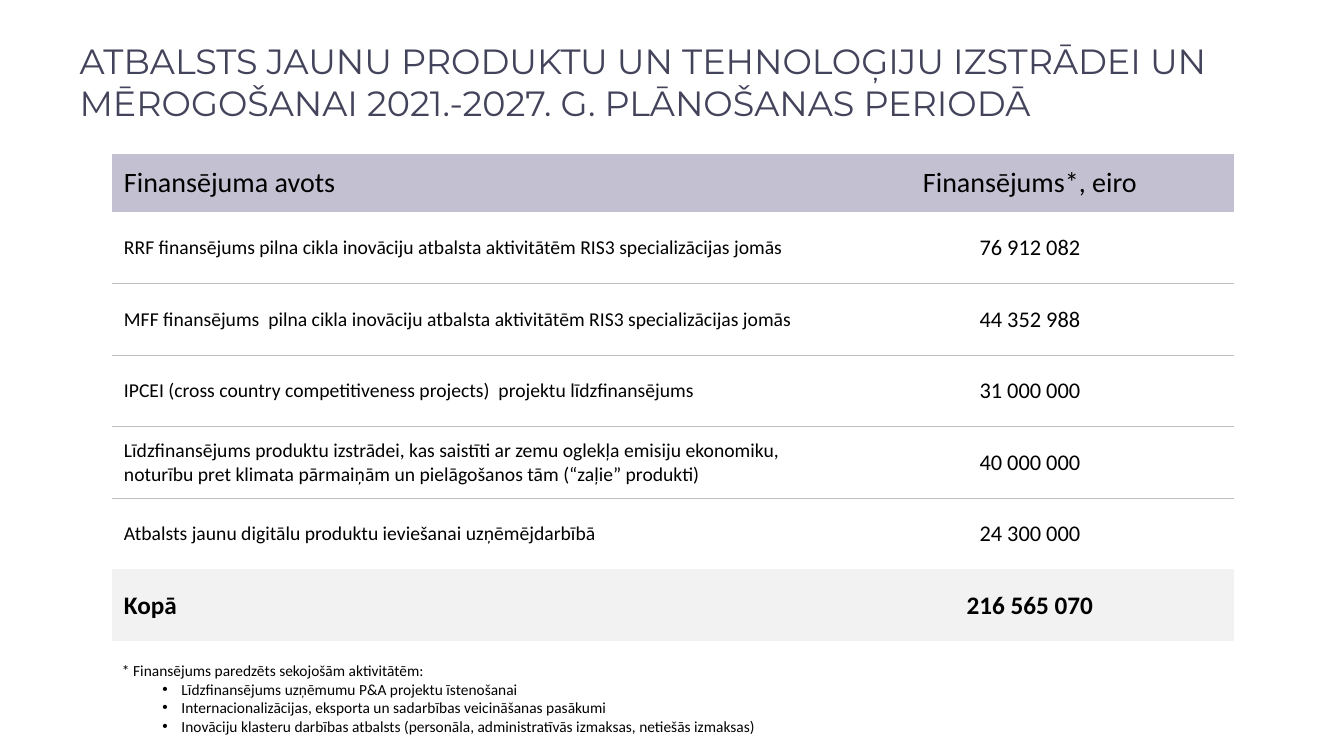
from dataclasses import dataclass

from lxml import etree
from pptx import Presentation
from pptx.dml.color import RGBColor
from pptx.enum.text import MSO_ANCHOR, MSO_AUTO_SIZE, PP_ALIGN
from pptx.oxml.ns import qn
from pptx.util import Pt

LEFT, CENTER = PP_ALIGN.LEFT, PP_ALIGN.CENTER
TOP, MIDDLE = MSO_ANCHOR.TOP, MSO_ANCHOR.MIDDLE
NO_AUTOFIT = MSO_AUTO_SIZE.NONE
EMU_PER_PX = 9144  # 100 px to the inch


@dataclass(frozen=True)
class Theme:
    title_font: str = "Montserrat"
    body_font: str = "Calibri"
    title_color: str = "43435B"
    text_color: str = "000000"
    header_fill: str = "C3C1D1"
    total_fill: str = "F2F2F2"
    rule_color: str = "BFBFBF"
    rule_width: float = 0.25
    title_size: int = 25
    header_size: int = 20
    source_size: int = 14
    amount_size: int = 16
    total_size: int = 18
    note_size: int = 11


THEME = Theme()

TITLE = ("ATBALSTS JAUNU PRODUKTU UN TEHNOLOĢIJU IZSTRĀDEI UN "
         "MĒROGOŠANAI 2021.-2027. G. PLĀNOŠANAS PERIODĀ")
HEADER = ("Finansējuma avots", "Finansējums*, eiro")
FUNDING = [
    ("RRF finansējums pilna cikla inovāciju atbalsta aktivitātēm RIS3 specializācijas jomās",
     "76 912 082"),
    ("MFF finansējums  pilna cikla inovāciju atbalsta aktivitātēm RIS3 specializācijas jomās",
     "44 352 988"),
    ("IPCEI (cross country competitiveness projects)  projektu līdzfinansējums",
     "31 000 000"),
    ("Līdzfinansējums produktu izstrādei, kas saistīti ar zemu oglekļa emisiju "
     "ekonomiku, noturību pret klimata pārmaiņām un pielāgošanos tām (“zaļie” produkti)",
     "40 000 000"),
    ("Atbalsts jaunu digitālu produktu ieviešanai uzņēmējdarbībā", "24 300 000"),
]
TOTAL = ("Kopā", "216 565 070")
NOTE_LEAD = "* Finansējums paredzēts sekojošām aktivitātēm:"
NOTE_ITEMS = [
    "Līdzfinansējums uzņēmumu P&A projektu īstenošanai",
    "Internacionalizācijas, eksporta un sadarbības veicināšanas pasākumi",
    "Inovāciju klasteru darbības atbalsts (personāla, administratīvās izmaksas, netiešās izmaksas)",
]


def px(length):
    return length * EMU_PER_PX


def format_para(para, font, size, color, align=LEFT, bold=False):
    para.alignment = align
    for span in para.runs:
        span.font.name = font
        span.font.size = Pt(size)
        span.font.bold = bold
        span.font.color.rgb = RGBColor.from_string(color)


def place(box, left, top, width, height):
    box.left, box.top, box.width, box.height = map(px, (left, top, width, height))
    frame = box.text_frame
    frame.auto_size = NO_AUTOFIT
    frame.word_wrap = True
    frame.vertical_anchor = TOP


def add_title(page):
    box = page.shapes.title
    place(box, 69, 34, 1237, 94)
    box.text_frame.text = TITLE
    format_para(box.text_frame.paragraphs[0], THEME.title_font,
                THEME.title_size, THEME.title_color)


def set_bullet(para, bulleted):
    props = para._p.get_or_add_pPr()
    props.set("marL", str(px(59) if bulleted else 0))
    props.set("indent", str(px(-19) if bulleted else 0))
    if bulleted:
        etree.SubElement(props, qn("a:buFont"), typeface="Arial")
        etree.SubElement(props, qn("a:buChar"), char="•")
    else:
        etree.SubElement(props, qn("a:buNone"))


def add_note(page):
    box = page.placeholders[1]
    place(box, 111, 651, 832, 84)
    box.text_frame.text = "\n".join([NOTE_LEAD, *NOTE_ITEMS])
    for index, para in enumerate(box.text_frame.paragraphs):
        format_para(para, THEME.body_font, THEME.note_size, THEME.text_color)
        para.space_before = Pt(0)
        set_bullet(para, bulleted=index > 0)


def set_borders(cell, ruled_sides):
    """Draw thin rules on the named sides (T, B) and clear the others."""
    props = cell._tc.get_or_add_tcPr()
    for side in "LRTB":
        line = etree.SubElement(props, qn(f"a:ln{side}"), w=str(Pt(THEME.rule_width)))
        if side in ruled_sides:
            fill = etree.SubElement(line, qn("a:solidFill"))
            etree.SubElement(fill, qn("a:srgbClr"), val=THEME.rule_color)
        else:
            etree.SubElement(line, qn("a:noFill"))


def fill_row(row, texts, sizes, fill=None, bold=False, ruled_sides=""):
    for cell, text, size, align, inset in zip(row.cells, texts, sizes,
                                              (LEFT, CENTER), (12, 1)):
        cell.text = text
        cell.vertical_anchor = MIDDLE
        cell.margin_left = px(inset)
        cell.margin_right = cell.margin_top = px(1)
        cell.margin_bottom = 0
        format_para(cell.text_frame.paragraphs[0], THEME.body_font, size,
                    THEME.text_color, align, bold)
        set_borders(cell, ruled_sides)
        if fill:
            cell.fill.solid()
            cell.fill.fore_color.rgb = RGBColor.from_string(fill)
        else:
            cell.fill.background()


def add_funding_table(page):
    widths = (708, 405)
    heights = [57] + [int(71.5)] * (len(FUNDING) + 1)
    table = page.shapes.add_table(len(heights), len(widths), px(111), px(153),
                                  px(sum(widths)), px(sum(heights))).table
    table.first_row = table.horz_banding = False
    for column, width in zip(table.columns, widths):
        column.width = px(width)
    for row, height in zip(table.rows, heights):
        row.height = px(height)

    header, *funding_rows, total = table.rows
    fill_row(header, HEADER, [THEME.header_size] * 2, THEME.header_fill)
    for index, (row, texts) in enumerate(zip(funding_rows, FUNDING)):
        above = "T" if index > 0 else ""
        below = "B" if index < len(FUNDING) - 1 else ""
        fill_row(row, texts, (THEME.source_size, THEME.amount_size),
                 ruled_sides=above + below)
    fill_row(total, TOTAL, [THEME.total_size] * 2, THEME.total_fill, bold=True)


def main():
    deck = Presentation()
    deck.slide_width, deck.slide_height = px(1333), px(750)
    page = deck.slides.add_slide(deck.slide_layouts[1])
    add_funding_table(page)
    add_note(page)
    add_title(page)
    deck.save("out.pptx")


if __name__ == "__main__":
    main()
